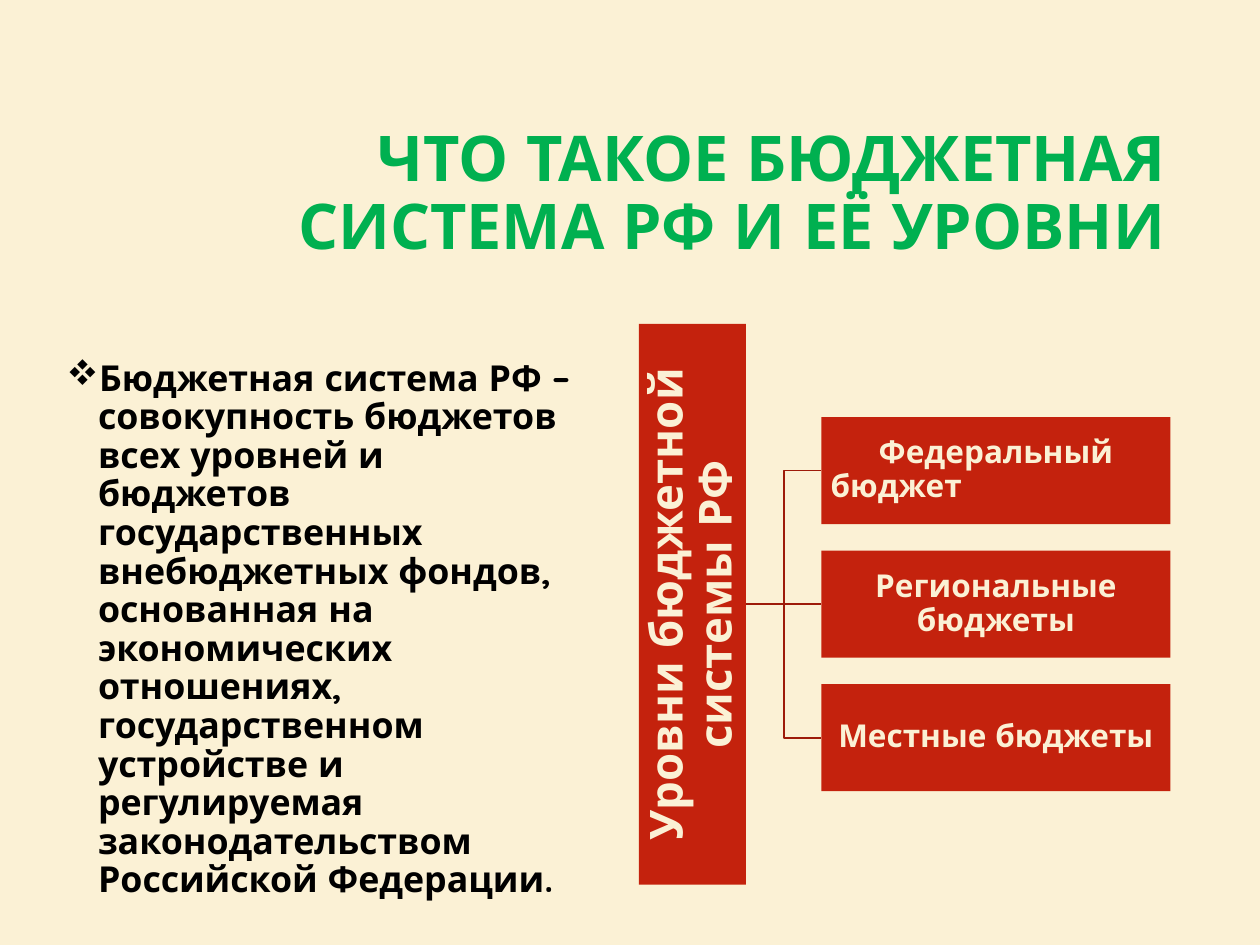
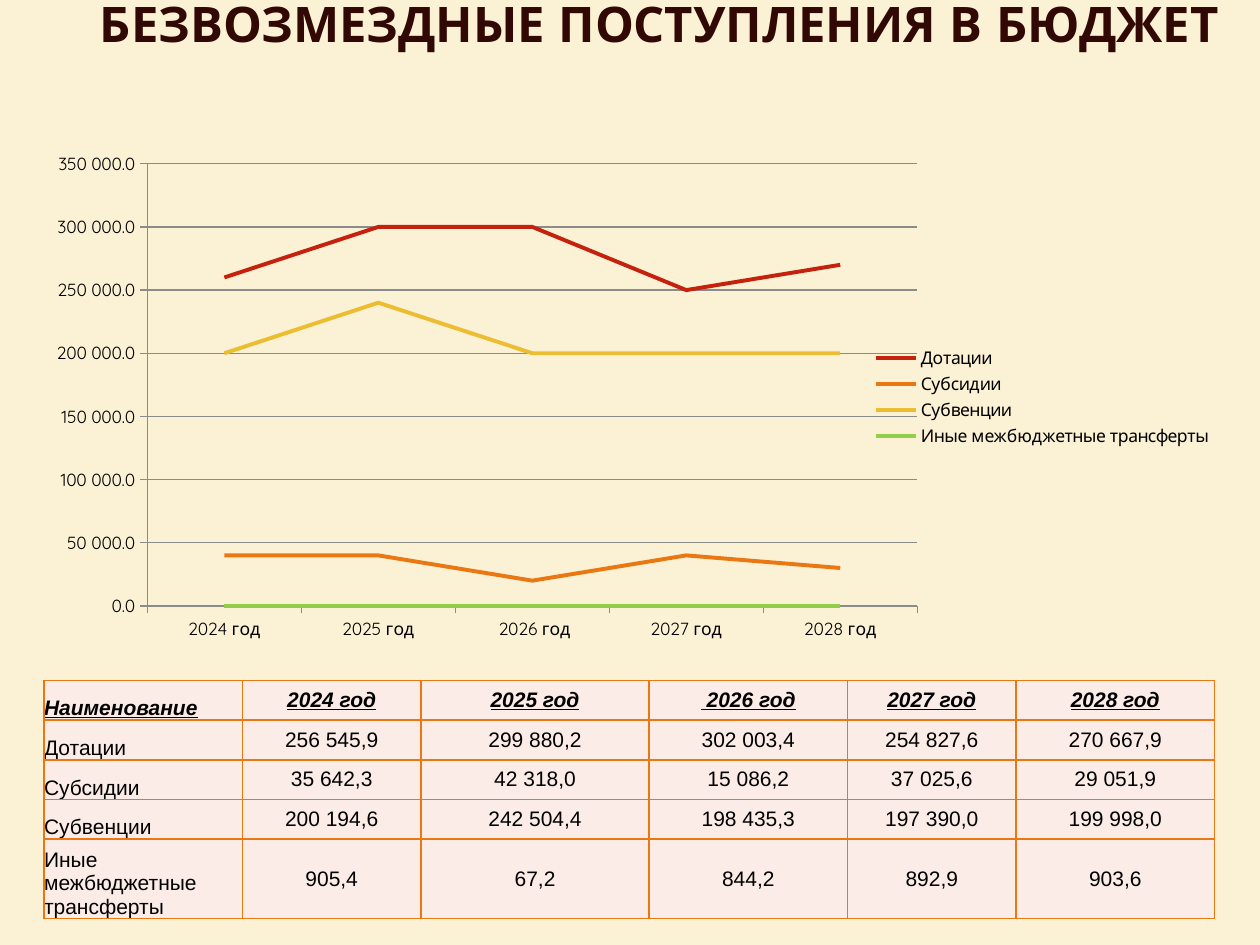
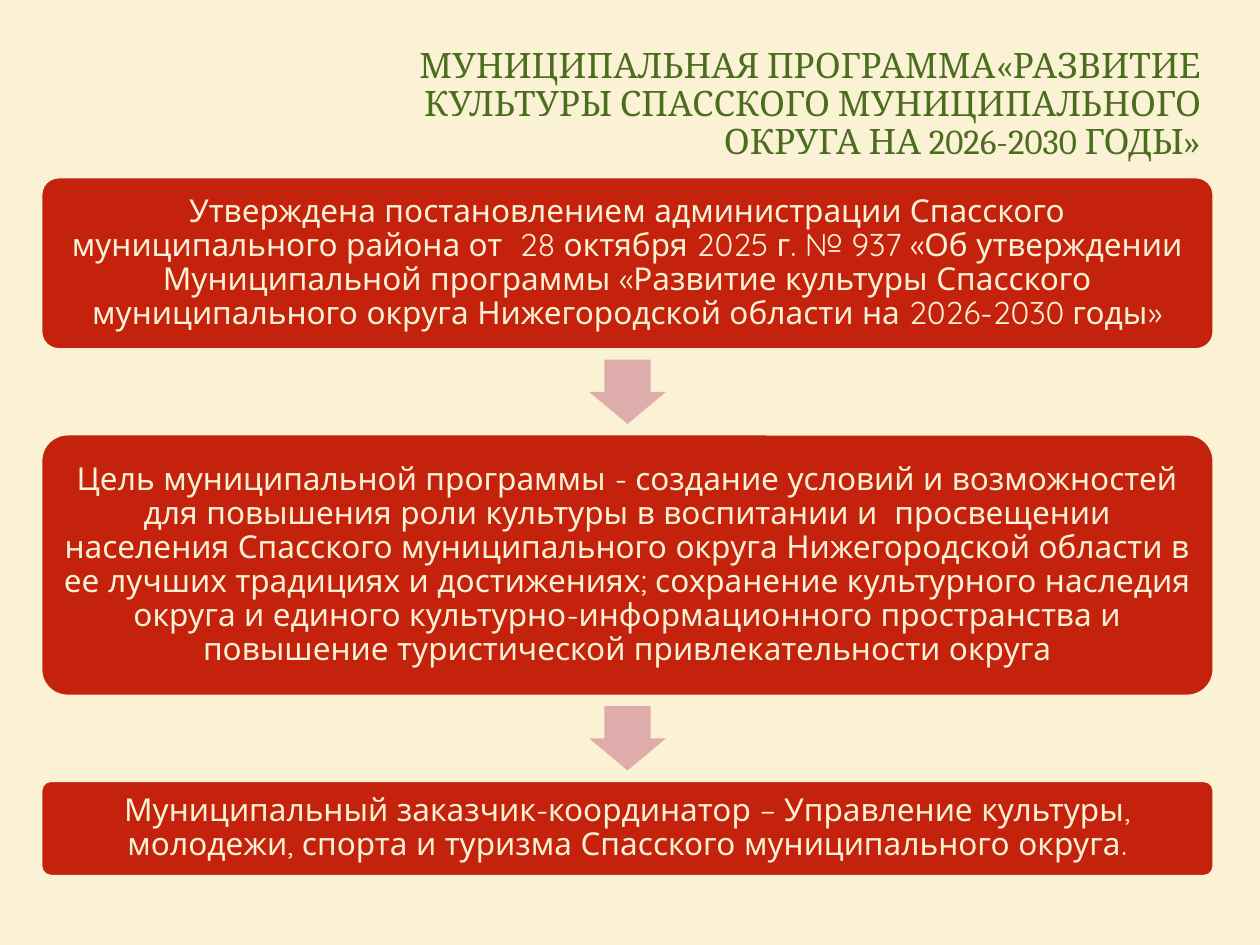
from dataclasses import dataclass

import pptx
import pptx.chart.data
import pptx.dml.color
import pptx.enum.chart
import pptx.enum.shapes
import pptx.enum.text
import pptx.oxml
import pptx.oxml.ns
import pptx.util
from lxml import etree
from pptx.dml.color import RGBColor
from pptx.util import Inches

CREAM = RGBColor(0xFB, 0xF1, 0xD5)
RED = RGBColor(0xC4, 0x22, 0x0D)
DARK_RED = RGBColor(0x9D, 0x1B, 0x0A)
MAROON = RGBColor(0x31, 0x08, 0x03)
GREEN = RGBColor(0x00, 0xB0, 0x50)
OLIVE = RGBColor(0x4A, 0x6E, 0x1E)
BLACK = RGBColor(0x00, 0x00, 0x00)
ORANGE = RGBColor(0xEB, 0x77, 0x12)
YELLOW = RGBColor(0xEC, 0xBD, 0x31)
LIME = RGBColor(0x92, 0xCE, 0x4A)
PINK = RGBColor(0xDE, 0xAC, 0xAB)
PALE_PINK = RGBColor(0xFB, 0xEC, 0xE7)
GREY = RGBColor(0x8B, 0x8B, 0x8B)

MAIN_FONT = "Quicksand"
LEFT = pptx.enum.text.PP_ALIGN.LEFT
CENTER = pptx.enum.text.PP_ALIGN.CENTER
RIGHT = pptx.enum.text.PP_ALIGN.RIGHT
TOP = pptx.enum.text.MSO_ANCHOR.TOP
MIDDLE = pptx.enum.text.MSO_ANCHOR.MIDDLE
BOTTOM = pptx.enum.text.MSO_ANCHOR.BOTTOM
SHAPES = pptx.enum.shapes.MSO_SHAPE
CONNECTORS = pptx.enum.shapes.MSO_CONNECTOR


@dataclass
class Area:
    left: float
    top: float
    width: float
    height: float

    def lengths(self) -> list:
        return [Inches(n) for n in (self.left, self.top, self.width, self.height)]


@dataclass
class Style:
    size: float
    color: RGBColor
    bold: bool = False
    font: str = MAIN_FONT
    align: int = CENTER
    anchor: int = MIDDLE


@dataclass
class Step:
    height: float
    text: str


BOX_STYLE = Style(18, CREAM)
LEVEL_STYLE = Style(18, CREAM, bold=True)
BAR_STYLE = Style(26, CREAM, bold=True)
BODY_STYLE = Style(20.4, BLACK, bold=True, align=LEFT, anchor=TOP)

LEVELS = ["Федеральный бюджет\t\t", "Региональные бюджеты", "Местные бюджеты"]
DEFINITION = (
    "Бюджетная система РФ – совокупность бюджетов всех уровней и бюджетов "
    "государственных внебюджетных фондов, основанная на экономических отношениях, "
    "государственном устройстве и регулируемая законодательством Российской Федерации."
)

YEARS = ["2024 год", "2025 год", " 2026 год", "2027 год", "2028 год"]
INCOME = {
    "Дотации": ["256 545,9", "299 880,2", "302 003,4", "254 827,6", "270 667,9"],
    "Субсидии": ["35 642,3", "42 318,0", "15 086,2", "37 025,6", "29 051,9"],
    "Субвенции": ["200 194,6", "242 504,4", "198 435,3", "197 390,0", "199 998,0"],
    "Иные межбюджетные трансферты": ["905,4", "67,2", "844,2", "892,9", "903,6"],
}
SERIES_COLORS = [RED, ORANGE, YELLOW, LIME]
CHART_AREA = Area(0.35, 1.15, 9.37, 4)
PLOT_AREA = Area(0.82, 0.15, 6.11, 3.51)
TABLE_AREA = Area(0.35, 5.4, 9.29, 1.89)
COLUMN_SHARES = [20, 18, 23, 20, 17, 20]
ROW_SHARES = [1, 1, 1, 1, 2]

STEPS = [
    Step(1.36, "Утверждена постановлением администрации Спасского муниципального района "
         "от  28 октября 2025 г. № 937 «Об утверждении Муниципальной программы "
         "«Развитие культуры Спасского муниципального округа Нижегородской области "
         "на 2026-2030 годы»"),
    Step(2.07, "Цель муниципальной программы - создание условий и возможностей для "
         "повышения роли культуры в воспитании и  просвещении населения Спасского "
         "муниципального округа Нижегородской области в ее лучших традициях и "
         "достижениях; сохранение культурного наследия округа и единого "
         "культурно-информационного пространства и повышение туристической "
         "привлекательности округа"),
    Step(0.75, "Муниципальный заказчик-координатор – Управление культуры, молодежи, "
         "спорта и туризма Спасского муниципального округа."),
]


def write(box, text: str, style: Style, inset: float | None = None):
    frame = box.text_frame
    frame.word_wrap = True
    frame.vertical_anchor = style.anchor
    if inset is not None:
        frame.margin_left = frame.margin_right = Inches(inset)
        frame.margin_top = frame.margin_bottom = Inches(inset)
    frame.text = text
    para = frame.paragraphs[0]
    para.alignment = style.align
    para.line_spacing = 0.9
    for span in para.runs:
        span.font.name = style.font
        span.font.size = pptx.util.Pt(style.size)
        span.font.bold = style.bold
        span.font.color.rgb = style.color
    return para


def add_text(page, area: Area, text: str, style: Style):
    return write(page.shapes.add_textbox(*area.lengths()), text, style)


def add_title(page, area: Area, text: str, size: float, color: RGBColor,
              bold: bool = True, font: str = MAIN_FONT) -> None:
    add_text(page, area, text, Style(size, color, bold, font, RIGHT))


def add_block(page, kind: int, area: Area, fill: RGBColor, line: RGBColor | None = None):
    block = page.shapes.add_shape(kind, *area.lengths())
    block.shadow.inherit = False
    block.fill.solid()
    block.fill.fore_color.rgb = fill
    if line is None:
        block.line.fill.background()
    else:
        block.line.color.rgb = line
        block.line.width = pptx.util.Pt(1)
    return block


def add_link(page, kind: int, start: tuple[float, float], end: tuple[float, float]) -> None:
    link = page.shapes.add_connector(kind, *[Inches(n) for n in start + end])
    link.line.color.rgb = DARK_RED
    link.line.width = pptx.util.Pt(1)
    etree.SubElement(link._element.spPr, pptx.oxml.ns.qn("a:effectLst"))


def add_bullet(para, font: str, symbol: str, indent: float) -> None:
    properties = para._p.get_or_add_pPr()
    properties.set("marL", str(Inches(indent)))
    properties.set("indent", str(-Inches(indent)))
    typeface = etree.SubElement(properties, pptx.oxml.ns.qn("a:buFont"))
    typeface.set("typeface", font)
    typeface.set("charset", "2")
    bullet = etree.SubElement(properties, pptx.oxml.ns.qn("a:buChar"))
    bullet.set("char", symbol)


def add_borders(cell, color: RGBColor) -> None:
    properties = cell._tc.get_or_add_tcPr()
    for side in ("lnL", "lnR", "lnT", "lnB"):
        properties.append(pptx.oxml.parse_xml(
            f'<a:{side} {pptx.oxml.ns.nsdecls("a")} w="{pptx.util.Pt(1)}">'
            f'<a:solidFill><a:srgbClr val="{color}"/></a:solidFill></a:{side}>'))


def fill_cell(cell, text: str, header: bool, first: bool) -> None:
    add_borders(cell, ORANGE)
    cell.fill.solid()
    cell.fill.fore_color.rgb = PALE_PINK
    cell.margin_left = cell.margin_right = cell.margin_top = cell.margin_bottom = 0
    cell.vertical_anchor = BOTTOM if first else MIDDLE
    cell.text_frame.text = text
    para = cell.text_frame.paragraphs[0]
    para.alignment = LEFT if first else CENTER
    for span in para.runs:
        span.font.name = "Arial"
        span.font.size = pptx.util.Pt(12)
        span.font.color.rgb = BLACK
        span.font.bold = span.font.italic = span.font.underline = header


def add_income_table(page) -> None:
    rows = [["Наименование", *YEARS]] + [[name, *sums] for name, sums in INCOME.items()]
    table = page.shapes.add_table(len(rows), len(COLUMN_SHARES), *TABLE_AREA.lengths()).table
    table.first_row = table.horz_banding = False
    for column, share in zip(table.columns, COLUMN_SHARES):
        column.width = Inches(TABLE_AREA.width * share / sum(COLUMN_SHARES))
    for row, share in zip(table.rows, ROW_SHARES):
        row.height = Inches(TABLE_AREA.height * share / sum(ROW_SHARES))
    for row_index, texts in enumerate(rows):
        for column_index, text in enumerate(texts):
            fill_cell(table.cell(row_index, column_index), text,
                      row_index == 0, column_index == 0)


def place_plot(chart, plot: Area, whole: Area) -> None:
    plot_area = chart._chartSpace.chart.plotArea
    for layout in plot_area.findall(pptx.oxml.ns.qn("c:layout")):
        plot_area.remove(layout)
    plot_area.insert(0, pptx.oxml.parse_xml(
        f'<c:layout {pptx.oxml.ns.nsdecls("c")}><c:manualLayout>'
        '<c:layoutTarget val="inner"/><c:xMode val="edge"/><c:yMode val="edge"/>'
        f'<c:x val="{plot.left / whole.width}"/><c:y val="{plot.top / whole.height}"/>'
        f'<c:w val="{plot.width / whole.width}"/><c:h val="{plot.height / whole.height}"/>'
        '</c:manualLayout></c:layout>'))


def rounded_amount(text: str) -> float:
    return round(float(text.replace(" ", "").replace(",", ".")), -4)


def add_income_chart(page) -> None:
    data = pptx.chart.data.CategoryChartData(number_format="#\\ ##0.0")
    data.categories = YEARS
    for name, sums in INCOME.items():
        data.add_series(name, [rounded_amount(text) for text in sums])
    chart = page.shapes.add_chart(pptx.enum.chart.XL_CHART_TYPE.LINE,
                                  *CHART_AREA.lengths(), data).chart
    chart.has_title = False
    chart.font.name = MAIN_FONT
    chart.font.size = pptx.util.Pt(10)
    chart.font.color.rgb = BLACK
    chart.has_legend = True
    chart.legend.position = pptx.enum.chart.XL_LEGEND_POSITION.RIGHT
    chart.legend.include_in_layout = False
    chart.plots[0].vary_by_categories = False
    for series, color in zip(chart.plots[0].series, SERIES_COLORS):
        series.smooth = False
        series.marker.style = pptx.enum.chart.XL_MARKER_STYLE.NONE
        series.format.line.color.rgb = color
        series.format.line.width = pptx.util.Pt(2.25)
    for axis in (chart.category_axis, chart.value_axis):
        axis.major_tick_mark = pptx.enum.chart.XL_TICK_MARK.OUTSIDE
        axis.format.line.color.rgb = GREY
    values = chart.value_axis
    values.minimum_scale = 0
    values.maximum_scale = 350000
    values.major_unit = 50000
    values.has_major_gridlines = True
    values.major_gridlines.format.line.color.rgb = GREY
    values.tick_labels.number_format = "#\\ ##0.0"
    values.tick_labels.number_format_is_linked = False
    place_plot(chart, PLOT_AREA, CHART_AREA)


def build_levels_page(page) -> None:
    add_title(page, Area(0.91, 0.84, 8.44, 1.41),
              "ЧТО ТАКОЕ БЮДЖЕТНАЯ СИСТЕМА РФ И ЕЁ УРОВНИ", 36, GREEN)
    definition = add_text(page, Area(0.43, 2.81, 4.27, 4.45), DEFINITION, BODY_STYLE)
    add_bullet(definition, "Wingdings", "v", 0.25)

    areas = [Area(6.52, 3.31 + 1.06 * index, 2.77, 0.85) for index in range(len(LEVELS))]
    middles = [area.top + area.height / 2 for area in areas]
    root = (5.92, middles[1])
    for area, middle in zip(areas, middles):
        kind = CONNECTORS.STRAIGHT if middle == root[1] else CONNECTORS.ELBOW
        add_link(page, kind, root, (area.left, middle))
    bar = add_block(page, SHAPES.RECTANGLE, Area(3.27, 4.37, 4.45, 0.85), RED)
    bar.rotation = 270
    write(bar, "Уровни бюджетной системы РФ", BAR_STYLE, 0.02)
    for area, text in zip(areas, LEVELS):
        para = write(add_block(page, SHAPES.RECTANGLE, area, RED), text, LEVEL_STYLE, 0.01)
        para._p.get_or_add_pPr().set("defTabSz", str(pptx.util.Pt(63)))


def build_income_page(page) -> None:
    add_title(page, Area(0.04, -0.27, 9.73, 0.97),
              "БЕЗВОЗМЕЗДНЫЕ ПОСТУПЛЕНИЯ В БЮДЖЕТ", 28, MAROON)
    add_income_table(page)
    add_income_chart(page)


def build_program_page(page) -> None:
    add_title(page, Area(2.66, 0.13, 6.97, 1.41),
              "МУНИЦИПАЛЬНАЯ ПРОГРАММА«РАЗВИТИЕ КУЛЬТУРЫ СПАССКОГО МУНИЦИПАЛЬНОГО "
              "ОКРУГА НА 2026-2030 ГОДЫ»", 20, OLIVE, bold=False, font="Cambria")
    top, gap = 1.41, 0.68
    arrow_width, arrow_height = 0.51, 0.61
    for step in STEPS:
        area = Area(0.33, top, 9.3, step.height)
        if step is not STEPS[0]:
            arrow = add_block(page, SHAPES.RIGHT_ARROW,
                              Area(area.left + (area.width - arrow_width) / 2,
                                   top - (gap + arrow_height) / 2,
                                   arrow_width, arrow_height), PINK)
            arrow.rotation = 90
            arrow.adjustments[0] = 0.6
            arrow.adjustments[1] = 0.5
        box = add_block(page, SHAPES.ROUNDED_RECTANGLE, area, RED, CREAM)
        box.adjustments[0] = 0.1
        write(box, step.text, BOX_STYLE, 0.07)
        top += step.height + gap


def main() -> None:
    deck = pptx.Presentation()
    deck.slide_width = Inches(10)
    deck.slide_height = Inches(7.5)
    background = deck.slide_master.background.fill
    background.solid()
    background.fore_color.rgb = CREAM
    for build in (build_levels_page, build_income_page, build_program_page):
        build(deck.slides.add_slide(deck.slide_layouts[6]))
    deck.save("out.pptx")


if __name__ == "__main__":
    main()
